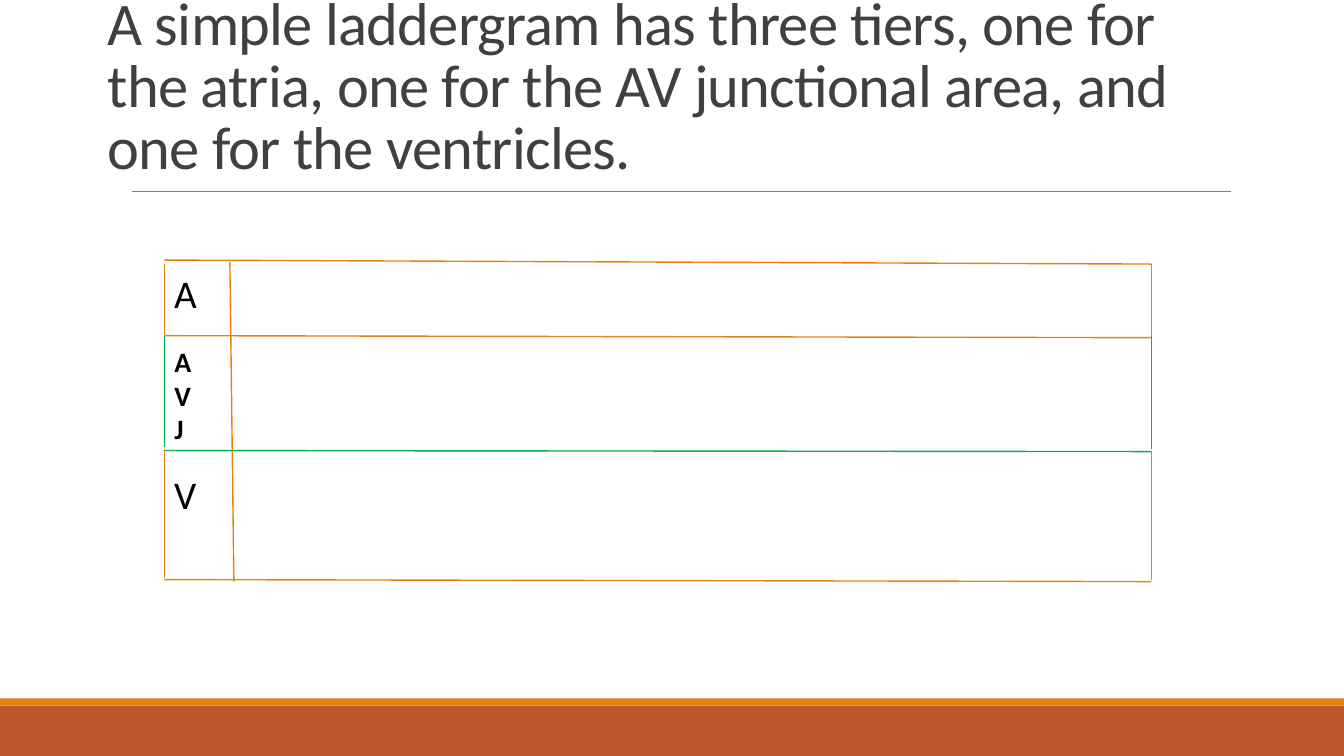
from dataclasses import dataclass

from lxml.etree import SubElement
from pptx import Presentation
from pptx.dml.color import RGBColor
from pptx.enum.shapes import MSO_CONNECTOR, MSO_SHAPE
from pptx.enum.text import MSO_ANCHOR, MSO_AUTO_SIZE
from pptx.oxml.ns import qn
from pptx.slide import Slide
from pptx.util import Inches, Pt

WHITE = RGBColor(0xFF, 0xFF, 0xFF)
BLACK = RGBColor(0x00, 0x00, 0x00)
CHARCOAL = RGBColor(0x40, 0x40, 0x40)
GRAY = RGBColor(0x80, 0x80, 0x80)
ORANGE = RGBColor(0xE4, 0x83, 0x12)
RUST = RGBColor(0xBD, 0x58, 0x2C)
GREEN = RGBColor(0x00, 0xB0, 0x50)

LEFT, RIGHT = 1.63, 11.42


@dataclass
class Band:
    top: float
    height: float
    color: RGBColor


@dataclass
class Rule:
    x1: float
    y1: float
    x2: float
    y2: float
    color: RGBColor = ORANGE
    width: float = 1


@dataclass
class Label:
    lines: list[str]
    left: float
    top: float
    width: float
    height: float
    size: float
    bold: bool = False
    color: RGBColor = BLACK
    anchor: MSO_ANCHOR = MSO_ANCHOR.TOP
    line_spacing: float = 1.0
    tracking: float = 0


FOOTER = [Band(7, 0.5, RUST), Band(6.93, 0.07, ORANGE)]

TITLE_RULE = Rule(1.31, 1.9, 12.21, 1.9, GRAY, 0.5)

# Each tier boundary slopes slightly from left to right
BOUNDARIES = [
    Rule(LEFT, 2.58, RIGHT, 2.62),
    Rule(LEFT, 3.33, RIGHT, 3.35),
    Rule(LEFT, 4.47, RIGHT, 4.48, GREEN),
    Rule(LEFT, 5.75, RIGHT, 5.77),
]
SIDES = [
    Rule(LEFT, 2.62, LEFT, 3.32),
    Rule(RIGHT, 2.62, RIGHT, 3.35),
    Rule(LEFT, 3.33, LEFT, 4.43, GREEN),
    Rule(RIGHT, 3.33, RIGHT, 4.45, GREEN),
    Rule(LEFT, 4.45, LEFT, 5.73),
    Rule(RIGHT, 4.47, RIGHT, 5.75),
]
LABEL_DIVIDER = Rule(2.28, 2.6, 2.32, 5.77)

TITLE = Label(
    ["A simple laddergram has three tiers, one for the atria, "
     "one for the AV junctional area, and one for the ventricles."],
    0.97, 0.26, 11, 1.59, 43.2, color=CHARCOAL,
    anchor=MSO_ANCHOR.BOTTOM, line_spacing=0.85, tracking=-0.5,
)
TIER_LABELS = [
    Label(["A"], LEFT, 2.62, 0.63, 0.57, 28),
    Label(["A", "V", "J"], LEFT, 3.37, 0.68, 1.11, 20, bold=True),
    Label(["V"], LEFT, 4.62, 0.63, 0.57, 28),
]


def draw_band(slide: Slide, band: Band) -> None:
    bar = slide.shapes.add_shape(
        MSO_SHAPE.RECTANGLE, 0, Inches(band.top), Inches(13.33), Inches(band.height))
    bar.shadow.inherit = False
    bar.fill.solid()
    bar.fill.fore_color.rgb = band.color
    bar.line.fill.background()


def draw_rule(slide: Slide, rule: Rule) -> None:
    line = slide.shapes.add_connector(
        MSO_CONNECTOR.STRAIGHT, Inches(rule.x1), Inches(rule.y1),
        Inches(rule.x2), Inches(rule.y2))
    line.line.color.rgb = rule.color
    line.line.width = Pt(rule.width)
    SubElement(line._element.spPr, qn("a:effectLst"))


def draw_label(slide: Slide, label: Label) -> None:
    box = slide.shapes.add_textbox(
        Inches(label.left), Inches(label.top), Inches(label.width), Inches(label.height))
    frame = box.text_frame
    frame_format = {
        "word_wrap": True,
        "auto_size": MSO_AUTO_SIZE.NONE,
        "vertical_anchor": label.anchor,
        "text": "\n".join(label.lines),
    }
    for name, value in frame_format.items():
        setattr(frame, name, value)
    font_format = {"name": "Calibri", "size": Pt(label.size), "bold": label.bold}
    for paragraph in frame.paragraphs:
        paragraph.line_spacing = label.line_spacing
        for run in paragraph.runs:
            for name, value in font_format.items():
                setattr(run.font, name, value)
            run.font.color.rgb = label.color
            if label.tracking:
                run._r.get_or_add_rPr().set("spc", str(round(label.tracking * 100)))


def main() -> None:
    prs = Presentation()
    prs.slide_width, prs.slide_height = Inches(13.33), Inches(7.5)
    slide = prs.slides.add_slide(prs.slide_layouts[6])
    slide.background.fill.solid()
    slide.background.fill.fore_color.rgb = WHITE

    # Footer and title
    for band in FOOTER:
        draw_band(slide, band)
    draw_rule(slide, TITLE_RULE)
    draw_label(slide, TITLE)

    # Laddergram
    for rule in [*BOUNDARIES, *SIDES, LABEL_DIVIDER]:
        draw_rule(slide, rule)
    for label in TIER_LABELS:
        draw_label(slide, label)

    prs.save("out.pptx")


if __name__ == "__main__":
    main()
